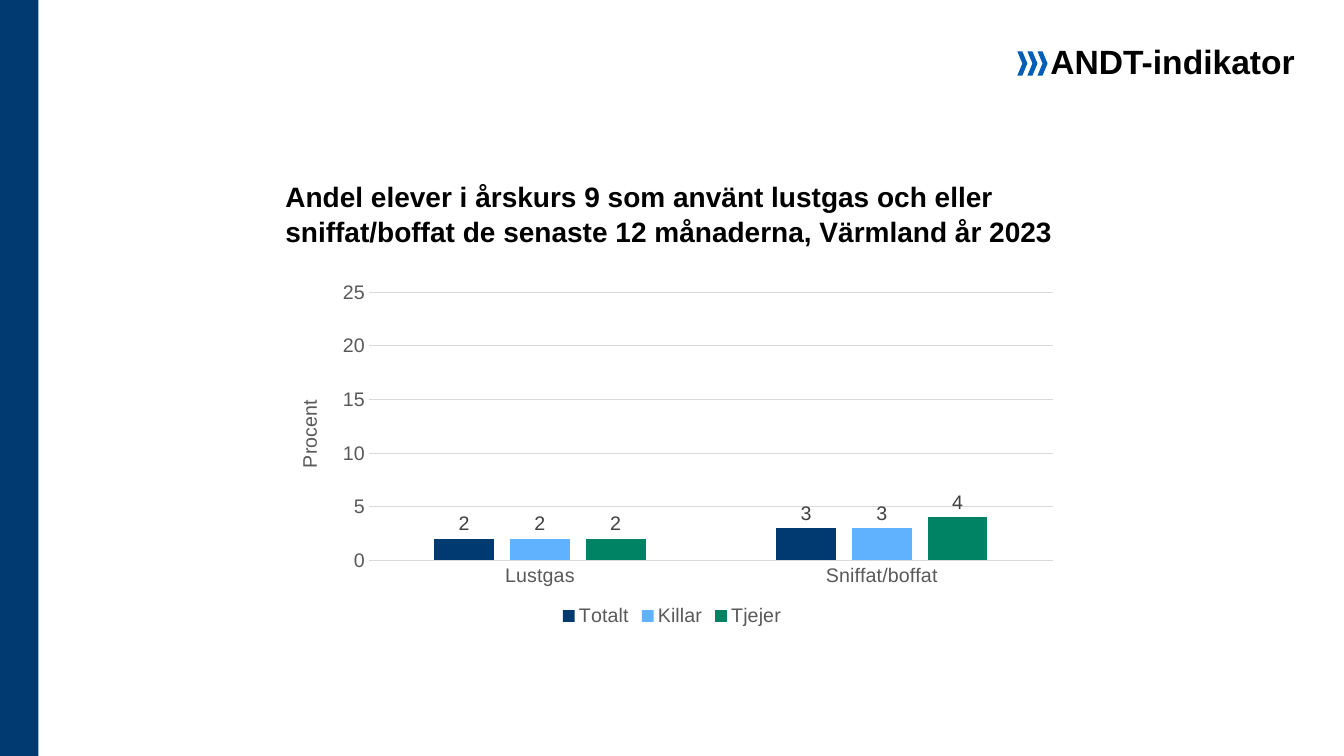
import pptx
import pptx.chart.data
import pptx.dml.color
import pptx.enum.chart
import pptx.enum.shapes
import pptx.enum.text
import pptx.util

Inches, Pt = pptx.util.Inches, pptx.util.Pt
RGBColor = pptx.dml.color.RGBColor
SHAPE = pptx.enum.shapes.MSO_SHAPE

NAVY = RGBColor(0x00, 0x3A, 0x70)
BLUE = RGBColor(0x00, 0x5E, 0xB8)
SKY = RGBColor(0x60, 0xB2, 0xFF)
GREEN = RGBColor(0x00, 0x82, 0x64)
BLACK = RGBColor(0x00, 0x00, 0x00)
LABEL_GREY = RGBColor(0x40, 0x40, 0x40)
TEXT_GREY = RGBColor(0x59, 0x59, 0x59)
LINE_GREY = RGBColor(0xD9, 0xD9, 0xD9)

CATEGORIES = ["Lustgas", "Sniffat/boffat"]
SERIES = [("Totalt", (2, 3), NAVY), ("Killar", (2, 3), SKY), ("Tjejer", (2, 4), GREEN)]


def set_font(font, size, color, bold=False):
    font.name = "Arial"
    font.size = Pt(size)
    font.bold = bold
    font.color.rgb = color


def set_line(line):
    line.color.rgb = LINE_GREY
    line.width = Pt(0.75)


def add_filled_shape(shapes, kind, x, y, w, h, color):
    sp = shapes.add_shape(kind, Inches(x), Inches(y), Inches(w), Inches(h))
    sp.shadow.inherit = False
    sp.fill.solid()
    sp.fill.fore_color.rgb = color
    sp.line.fill.background()
    return sp


def add_title(s, x, y, w, h):
    title = s.shapes.title
    title.left, title.top, title.width, title.height = map(Inches, (x, y, w, h))
    tf = title.text_frame
    tf.text = ("Andel elever i årskurs 9 som använt lustgas och eller "
               "sniffat/boffat de senaste 12 månaderna, Värmland år 2023")
    tf.word_wrap = True
    tf.auto_size = pptx.enum.text.MSO_AUTO_SIZE.NONE
    tf.vertical_anchor = pptx.enum.text.MSO_ANCHOR.BOTTOM
    p = tf.paragraphs[0]
    p.alignment = pptx.enum.text.PP_ALIGN.LEFT
    p.line_spacing = 1.05
    set_font(p.runs[0].font, 20, BLACK, bold=True)


def add_indicator_tag(s, x, y, w, h):
    """Three chevrons followed by the indicator label."""
    chevron_w = 0.1
    group = s.shapes.add_group_shape()
    for i in range(3):
        add_filled_shape(group.shapes, SHAPE.CHEVRON, x + i * chevron_w, y + 0.15,
                         chevron_w, 0.24, BLUE)
    label_x = 0.22
    box = s.shapes.add_textbox(Inches(x + label_x), Inches(y),
                               Inches(w - label_x), Inches(h))
    tf = box.text_frame
    tf.text = "ANDT-indikator"
    tf.word_wrap = False
    p = tf.paragraphs[0]
    p.alignment = pptx.enum.text.PP_ALIGN.CENTER
    set_font(p.runs[0].font, 24, BLACK, bold=True)


def format_axes(chart):
    cat, val = chart.category_axis, chart.value_axis
    for axis in (cat, val):
        axis.major_tick_mark = pptx.enum.chart.XL_TICK_MARK.NONE
        axis.minor_tick_mark = pptx.enum.chart.XL_TICK_MARK.NONE
        set_font(axis.tick_labels.font, 14, TEXT_GREY)
    set_line(cat.format.line)
    val.format.line.fill.background()
    val.minimum_scale, val.maximum_scale, val.major_unit = 0, 25, 5
    val.tick_labels.number_format = "0"
    val.tick_labels.number_format_is_linked = False
    set_line(val.major_gridlines.format.line)
    tf = val.axis_title.text_frame
    tf.text = "Procent"
    set_font(tf.paragraphs[0].runs[0].font, 14, TEXT_GREY)


def add_usage_chart(s, x, y, w, h):
    data = pptx.chart.data.CategoryChartData(number_format="0")
    data.categories = CATEGORIES
    for name, values, _ in SERIES:
        data.add_series(name, values)
    chart = s.shapes.add_chart(
        pptx.enum.chart.XL_CHART_TYPE.COLUMN_CLUSTERED,
        Inches(x), Inches(y), Inches(w), Inches(h), data).chart
    set_font(chart.font, 14, BLACK)
    chart.has_title = False
    chart.has_legend = True
    chart.legend.position = pptx.enum.chart.XL_LEGEND_POSITION.BOTTOM
    chart.legend.include_in_layout = False
    set_font(chart.legend.font, 14, TEXT_GREY)
    format_axes(chart)

    plot = chart.plots[0]
    plot.vary_by_categories = False
    plot.gap_width, plot.overlap = 219, -27
    for series, (_, _, color) in zip(plot.series, SERIES):
        series.format.fill.solid()
        series.format.fill.fore_color.rgb = color
        labels = series.data_labels
        labels.show_value = True
        labels.position = pptx.enum.chart.XL_LABEL_POSITION.OUTSIDE_END
        labels.number_format = "0"
        labels.number_format_is_linked = False
        set_font(labels.font, 14, LABEL_GREY)


def main():
    prs = pptx.Presentation()
    prs.slide_width, prs.slide_height = Inches(13.33), Inches(7.5)
    s = prs.slides.add_slide(prs.slide_layouts[5])
    add_filled_shape(s.shapes, SHAPE.RECTANGLE, 0, 0, 0.38, 7.5, NAVY)
    add_title(s, 2.73, 1.06, 7.87, 1.45)
    add_indicator_tag(s, 10.09, 0.36, 2.86, 0.38)
    add_usage_chart(s, 2.73, 2.72, 7.87, 3.54)
    prs.save("out.pptx")


if __name__ == "__main__":
    main()
